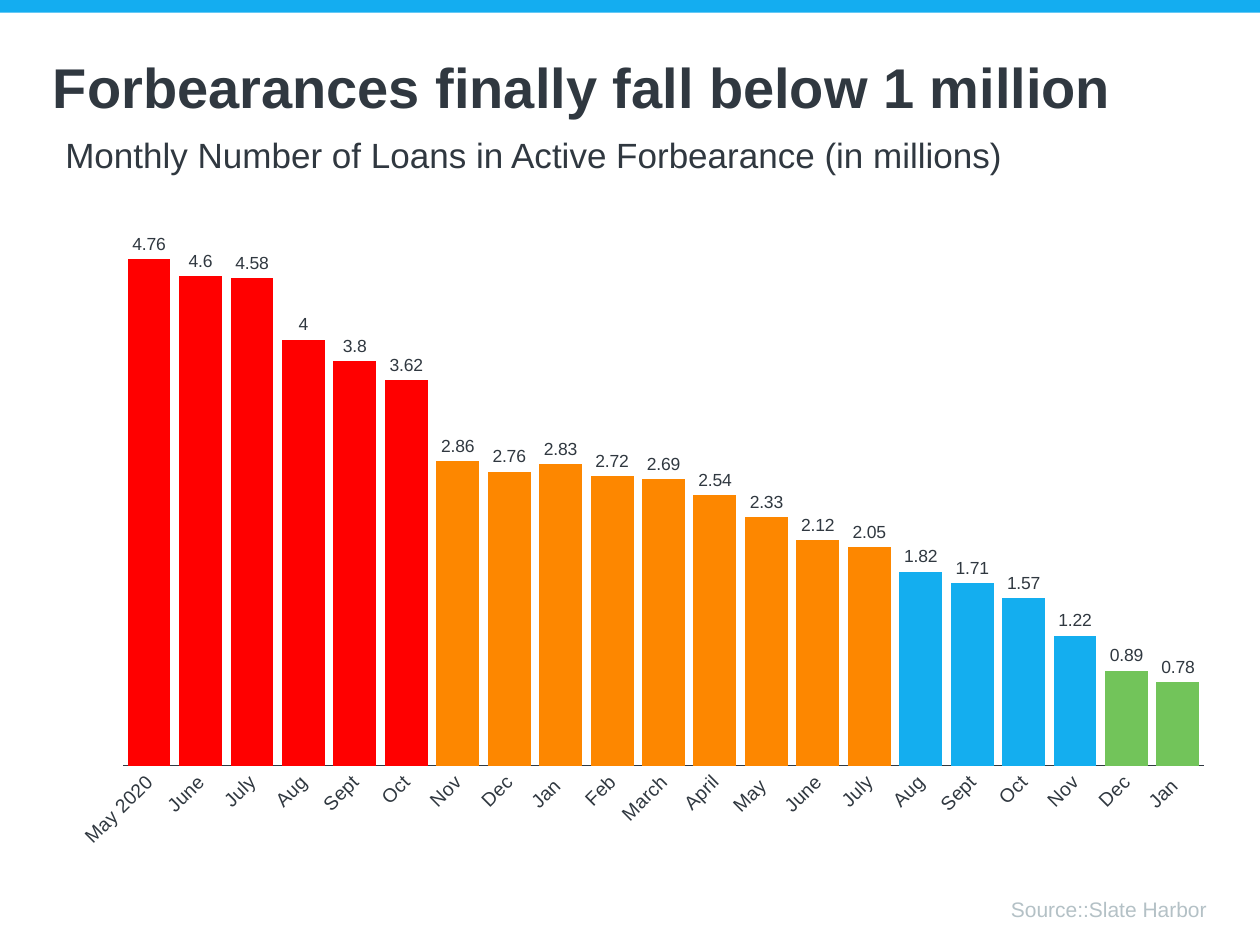
from pptx import Presentation
from pptx.chart.data import CategoryChartData
from pptx.dml.color import RGBColor
from pptx.enum import chart as ch, shapes, text
from pptx.oxml import parse_xml
from pptx.oxml.ns import nsdecls
from pptx.util import Inches, Pt

HUES = {"ink": "303840", "gray": "B4C1C6", "bar": "14ADF0", "red": "FF0000",
        "gold": "FD8700", "blue": "14AEEF", "green": "72C45A"}
FONT = "Arial"
TITLE = "Forbearances finally fall below 1 million"
SUB = "Monthly Number of Loans in Active Forbearance (in millions)"
SOURCE = "Source::Slate Harbor"
LOANS = [
    ("May 2020", 4.76, "red"), ("June", 4.6, "red"), ("July", 4.58, "red"),
    ("Aug", 4, "red"), ("Sept", 3.8, "red"), ("Oct", 3.62, "red"),
    ("Nov", 2.86, "gold"), ("Dec", 2.76, "gold"), ("Jan ", 2.83, "gold"),
    ("Feb", 2.72, "gold"), ("March", 2.69, "gold"), ("April", 2.54, "gold"),
    ("May ", 2.33, "gold"), ("June", 2.12, "gold"), ("July", 2.05, "gold"),
    ("Aug", 1.82, "blue"), ("Sept", 1.71, "blue"), ("Oct", 1.57, "blue"),
    ("Nov", 1.22, "blue"), ("Dec", 0.89, "green"), ("Jan ", 0.78, "green"),
]
PLOT = {"x": 0.057, "y": 0.02, "w": 0.924, "h": 0.833}
PLOT = {side: round(part, 2) for side, part in PLOT.items()}


def hue(name):
    return RGBColor.from_string(HUES[name])


def style(font, size, color="ink", bold=False):
    font.name, font.size, font.bold = FONT, Pt(size), bold
    font.color.rgb = hue(color)


def write(words, at, size, box=None, color="ink", bold=False,
          align=text.PP_ALIGN.LEFT, pad=(0, 0.05), space=0.9):
    spot = [Inches(n) for n in at]
    if box is None:
        box = slide.shapes.add_textbox(*spot)
    else:
        box.left, box.top, box.width, box.height = spot
    frame = box.text_frame
    frame.word_wrap = True
    frame.auto_size = text.MSO_AUTO_SIZE.NONE
    frame.vertical_anchor = text.MSO_ANCHOR.TOP
    frame.margin_left = frame.margin_right = Inches(pad[0])
    frame.margin_top, frame.margin_bottom = Inches(pad[1]), 0
    frame.text = words
    para = frame.paragraphs[0]
    para.alignment, para.line_spacing = align, space
    style(para.font, size, color, bold)


def draw(at):
    data = CategoryChartData()
    data.categories = [month for month, _, _ in LOANS]
    data.add_series("Series 1", [count for _, count, _ in LOANS])
    chart = slide.shapes.add_chart(ch.XL_CHART_TYPE.COLUMN_CLUSTERED,
                                   *[Inches(n) for n in at], data).chart
    chart.has_legend = chart.has_title = False
    style(chart.font, 10)

    plot = chart.plots[0]
    plot.gap_width, plot.overlap, plot.vary_by_categories = 20, -27, False
    series = plot.series[0]
    series.format.fill.solid()
    series.format.fill.fore_color.rgb = hue("red")
    for i, (_, _, color) in enumerate(LOANS):
        if color != "red":
            fill = series.points[i].format.fill
            fill.solid()
            fill.fore_color.rgb = hue(color)

    labels = series.data_labels
    labels.show_value = True
    labels.position = ch.XL_LABEL_POSITION.OUTSIDE_END
    style(labels.font, 10)

    months = chart.category_axis
    months.major_tick_mark = ch.XL_TICK_MARK.NONE
    months.has_major_gridlines = False
    style(months.tick_labels.font, 11)
    months.format.line.color.rgb = hue("ink")
    months.format.line.width = Pt(1)
    months.tick_labels.font._element.getparent().getparent().getparent().find(
        "{*}bodyPr").set("rot", "-2700000")

    scale = chart.value_axis
    scale.visible = scale.has_major_gridlines = False
    scale.minimum_scale, scale.maximum_scale = 0, 5

    area = chart._chartSpace.chart.plotArea
    for old in area.findall("{*}layout"):
        area.remove(old)
    modes = '<c:layoutTarget val="inner"/><c:xMode val="edge"/><c:yMode val="edge"/>'
    sides = "".join(f'<c:{k} val="{v}"/>' for k, v in PLOT.items())
    area.insert(0, parse_xml(f'<c:layout {nsdecls("c")}><c:manualLayout>'
                             f'{modes}{sides}</c:manualLayout></c:layout>'))


deck = Presentation()
deck.slide_width, deck.slide_height = Inches(10), Inches(7.5)
slide = deck.slides.add_slide(deck.slide_layouts[5])

band = slide.shapes.add_shape(shapes.MSO_SHAPE.RECTANGLE, 0, 0,
                              deck.slide_width, Inches(0.1))
band.shadow.inherit = False
band.fill.solid()
band.fill.fore_color.rgb = hue("bar")
band.line.fill.background()

write(TITLE, (0.42, 0.42, 9.17, 0.39), 32, box=slide.shapes.title,
      bold=True, pad=(0, 0), space=1)
write(SUB, (0.42, 1.05, 9.17, 0.34), 20, pad=(0.1, 0.05))
draw((0.42, 1.75, 9.32, 5.09))
write(SOURCE, (0.42, 7.09, 9.16, 0.24), 12, color="gray",
      align=text.PP_ALIGN.RIGHT)

deck.save("out.pptx")
